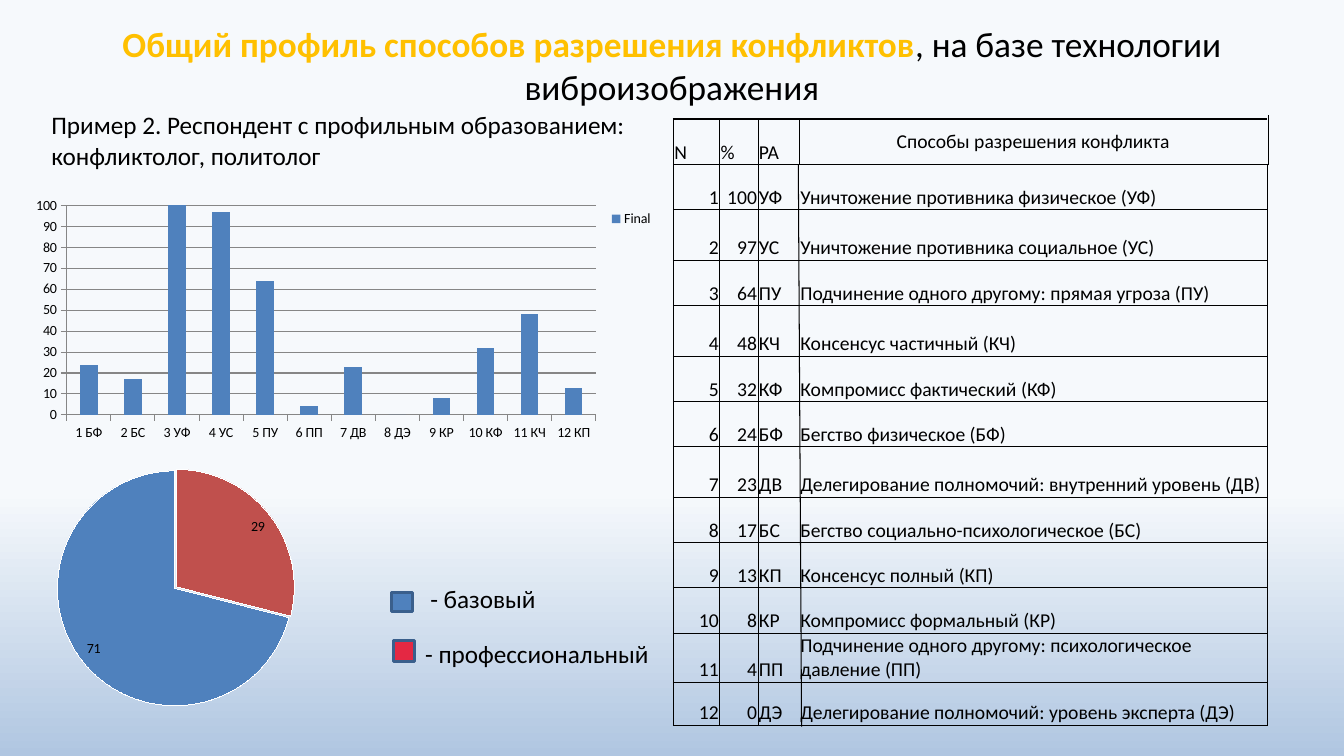
from dataclasses import dataclass

from lxml import etree
from pptx import Presentation
from pptx import util as u
from pptx.chart.data import CategoryChartData
from pptx.dml.color import RGBColor
from pptx.enum import chart as charts, shapes, text
from pptx.oxml import parse_xml
from pptx.oxml.ns import nsdecls, qn


@dataclass(frozen=True)
class Theme:
    font: str = "Calibri"
    ink: str = "000000"
    accent: str = "FFC000"
    blue: str = "4F81BD"
    red: str = "C0504D"
    key_red: str = "E42843"
    key_edge: str = "3A5F8C"
    grid: str = "868686"
    white: str = "FFFFFF"
    sky: tuple = ((0.65, "F6F9FC"), (1, "B0C6E1"))
    title: float = 25.2
    body: float = 18
    table: float = 14
    chart: float = 10


THEME = Theme()
WIDTH, HEIGHT = u.Inches(13.33), u.Inches(7.5)
HEADINGS = ("N", "%", "PA", "Способы разрешения конфликта")
METHODS = (
    (100, "УФ", "Уничтожение противника физическое"),
    (97, "УС", "Уничтожение противника социальное"),
    (64, "ПУ", "Подчинение одного другому: прямая угроза"),
    (48, "КЧ", "Консенсус частичный"),
    (32, "КФ", "Компромисс фактический"),
    (24, "БФ", "Бегство физическое"),
    (23, "ДВ", "Делегирование полномочий: внутренний уровень"),
    (17, "БС", "Бегство социально-психологическое"),
    (13, "КП", "Консенсус полный"),
    (8, "КР", "Компромисс формальный"),
    (4, "ПП", "Подчинение одного другому: психологическое давление"),
    (0, "ДЭ", "Делегирование полномочий: уровень эксперта"),
)
PROFILE_ORDER = "БФ БС УФ УС ПУ ПП ДВ ДЭ КР КФ КЧ КП".split()
COLUMN_SHARES = (3.45, 2.85, 3.08, 34.81)
ROW_SHARES = (6, 6, 6.67, 6, 6.67, 6, 6, 6.67, 6, 6, 6, 6, 5.73)


def across(share):
    return u.Emu(round(WIDTH * share / 100))


def down(share):
    return u.Emu(round(HEIGHT * share / 100))


def area(left, top, width, height):
    return across(left), down(top), across(width), down(height)


def rgb(value):
    return RGBColor.from_string(value)


def write(para, content, size=THEME.body, color=THEME.ink, bold=False, align=None):
    para.alignment = align
    span = para.add_run()
    span.text = content
    span.font.name = THEME.font
    span.font.size = u.Pt(size)
    span.font.bold = bold
    span.font.color.rgb = rgb(color)


def paint_background(page):
    fill = page.background.fill
    fill.gradient()
    fill.gradient_angle = 270
    for stop, (position, color) in zip(fill.gradient_stops, THEME.sky):
        stop.position = position
        stop.color.rgb = rgb(color)


def add_title(page):
    title = page.shapes.title
    title.left, title.top, title.width, title.height = area(5, 4, 90, 9.2)
    frame = title.text_frame
    frame.auto_size = text.MSO_AUTO_SIZE.NONE
    frame.vertical_anchor = text.MSO_ANCHOR.MIDDLE
    para = frame.paragraphs[0]
    center = text.PP_ALIGN.CENTER
    write(para, "Общий профиль способов разрешения конфликтов",
          size=THEME.title, color=THEME.accent, bold=True, align=center)
    write(para, ", на базе технологии виброизображения", size=THEME.title, align=center)


def add_label(page, content, place, wrap=True):
    frame = page.shapes.add_textbox(*place).text_frame
    frame.word_wrap = wrap
    frame.auto_size = text.MSO_AUTO_SIZE.SHAPE_TO_FIT_TEXT
    write(frame.paragraphs[0], content)


def add_key(page, place, color):
    box = page.shapes.add_shape(shapes.MSO_SHAPE.RECTANGLE, *place)
    box.shadow.inherit = False
    box.fill.solid()
    box.fill.fore_color.rgb = rgb(color)
    box.line.color.rgb = rgb(THEME.key_edge)
    box.line.width = u.Pt(2)


def add_rule(page, start, end):
    rule = page.shapes.add_connector(
        shapes.MSO_CONNECTOR.STRAIGHT,
        across(start[0]), down(start[1]), across(end[0]), down(end[1]))
    rule.line.color.rgb = rgb(THEME.ink)
    rule.line.width = u.Pt(0.75)
    etree.SubElement(rule._element.spPr, qn("a:effectLst"))


def border_widths(row, column):
    last_row, last_column = len(METHODS), len(HEADINGS) - 1
    left = 1 if column == 0 else 0.5
    right = 1 if column == last_column else 0.5
    if row and column == last_column:
        left = 0
    if row and column == last_column - 1 or not row and column == last_column:
        right = 0
    top = 1 if row <= 1 else 0.5
    bottom = 1 if row in (0, last_row) else 0.5
    return {"lnL": left, "lnR": right, "lnT": top, "lnB": bottom}


def set_borders(cell, widths):
    properties = cell._tc.get_or_add_tcPr()
    for index, (side, width) in enumerate(widths.items()):
        paint = f'<a:solidFill><a:srgbClr val="{THEME.ink}"/></a:solidFill>' if width else "<a:noFill/>"
        properties.insert(index, parse_xml(
            f'<a:{side} {nsdecls("a")} w="{u.Pt(width)}">{paint}</a:{side}>'))


def add_methods_table(page):
    rows = [HEADINGS] + [
        (str(number), str(percent), code, f"{name} ({code})")
        for number, (percent, code, name) in enumerate(METHODS, 1)]
    table = page.shapes.add_table(
        len(rows), len(HEADINGS), *area(50.1, 15.75, sum(COLUMN_SHARES), sum(ROW_SHARES))).table
    table.first_row = table.horz_banding = False
    for column, share in zip(table.columns, COLUMN_SHARES):
        column.width = across(share)
    for r, (values, share) in enumerate(zip(rows, ROW_SHARES)):
        table.rows[r].height = down(share)
        for c, value in enumerate(values):
            cell = table.cell(r, c)
            cell.fill.background()
            cell.margin_left = cell.margin_right = cell.margin_top = u.Inches(0.01)
            cell.margin_bottom = 0
            centered = r == 0 and c == len(HEADINGS) - 1
            cell.vertical_anchor = text.MSO_ANCHOR.MIDDLE if centered else text.MSO_ANCHOR.BOTTOM
            align = text.PP_ALIGN.RIGHT if r and c < 2 else text.PP_ALIGN.LEFT
            write(cell.text_frame.paragraphs[0], value, size=THEME.table,
                  align=text.PP_ALIGN.CENTER if centered else align)
            set_borders(cell, border_widths(r, c))


def set_layout(element, index, shares, target=""):
    for old in element.findall(qn("c:layout")):
        element.remove(old)
    sizes = "".join(f'<c:{key} val="{share}"/>' for key, share in zip("xywh", shares))
    element.insert(index, parse_xml(
        f'<c:layout {nsdecls("c")}><c:manualLayout>{target}'
        f'<c:xMode val="edge"/><c:yMode val="edge"/>{sizes}</c:manualLayout></c:layout>'))


def add_chart(page, kind, place, name, categories, values, plot_shares):
    data = CategoryChartData(number_format="0")
    data.categories = categories
    data.add_series(name, values)
    chart = page.shapes.add_chart(kind, *place, data).chart
    chart.has_title = chart.has_legend = False
    chart.font.name = THEME.font
    chart.font.size = u.Pt(THEME.chart)
    chart.font.color.rgb = rgb(THEME.ink)
    plot = chart.plots[0]
    set_layout(plot._element.getparent(), 0, plot_shares, '<c:layoutTarget val="inner"/>')
    return chart, plot


def add_profile_chart(page):
    percents = {code: percent for percent, code, name in METHODS}
    chart, plot = add_chart(
        page, charts.XL_CHART_TYPE.COLUMN_CLUSTERED, area(1.13, 24.8, 48, 39.6), "Final",
        [f"{number} {code}" for number, code in enumerate(PROFILE_ORDER, 1)],
        [percents[code] for code in PROFILE_ORDER], (0.08, 0.06, 0.82, 0.7))
    plot.vary_by_categories = False
    plot.gap_width = 150
    fill = plot.series[0].format.fill
    fill.solid()
    fill.fore_color.rgb = rgb(THEME.blue)
    scale = chart.value_axis
    scale.minimum_scale, scale.maximum_scale, scale.major_unit = 0, 100, 10
    scale.tick_labels.number_format = "0"
    scale.tick_labels.number_format_is_linked = False
    for line in (scale.major_gridlines.format.line, scale.format.line, chart.category_axis.format.line):
        line.color.rgb = rgb(THEME.grid)
    chart.has_legend = True
    chart.legend.position = charts.XL_LEGEND_POSITION.RIGHT
    chart.legend.include_in_layout = False
    set_layout(chart.legend._element, 1, (0.91, 0.06, 0.09, 0.09))


def add_education_pie(page):
    chart, plot = add_chart(
        page, charts.XL_CHART_TYPE.PIE, area(3.68, 60.13, 19.2, 35.2), "Series 1",
        ["1", "2"], [29, 71], (0.03, 0, 0.92, 1))
    series = plot.series[0]
    for index, color in enumerate((THEME.red, THEME.blue)):
        look = series.points[index].format
        look.fill.solid()
        look.fill.fore_color.rgb = rgb(color)
        look.line.color.rgb = rgb(THEME.white)
    series._element.find(qn("c:dPt")).addprevious(
        parse_xml(f'<c:explosion {nsdecls("c")} val="1"/>'))
    plot.has_data_labels = True
    labels = plot.data_labels
    labels.show_value = True
    labels.show_percentage = False
    labels.number_format = "0"
    labels.number_format_is_linked = False
    labels.position = charts.XL_LABEL_POSITION.INSIDE_END


def main():
    deck = Presentation()
    deck.slide_width, deck.slide_height = WIDTH, HEIGHT
    page = deck.slides.add_slide(deck.slide_layouts[5])
    paint_background(page)
    add_title(page)
    add_methods_table(page)
    add_rule(page, (59.4, 21.73), (59.64, 96.13))
    add_key(page, area(29.1, 78.4, 1.58, 2.53), THEME.blue)
    add_key(page, area(29.26, 84.67, 1.58, 2.8), THEME.key_red)
    add_label(page, "- базовый", area(31.28, 76.53, 9.9, 5.33), wrap=False)
    add_label(page, "- профессиональный", area(30.9, 83.73, 18.98, 5.33))
    add_rule(page, (94.37, 21.87), (94.37, 15.2))
    add_label(page, "Пример 2. Респондент с профильным образованием: конфликтолог, политолог",
              area(3.08, 13.87, 44.64, 9.47))
    add_profile_chart(page)
    add_education_pie(page)
    deck.save("out.pptx")


if __name__ == "__main__":
    main()
